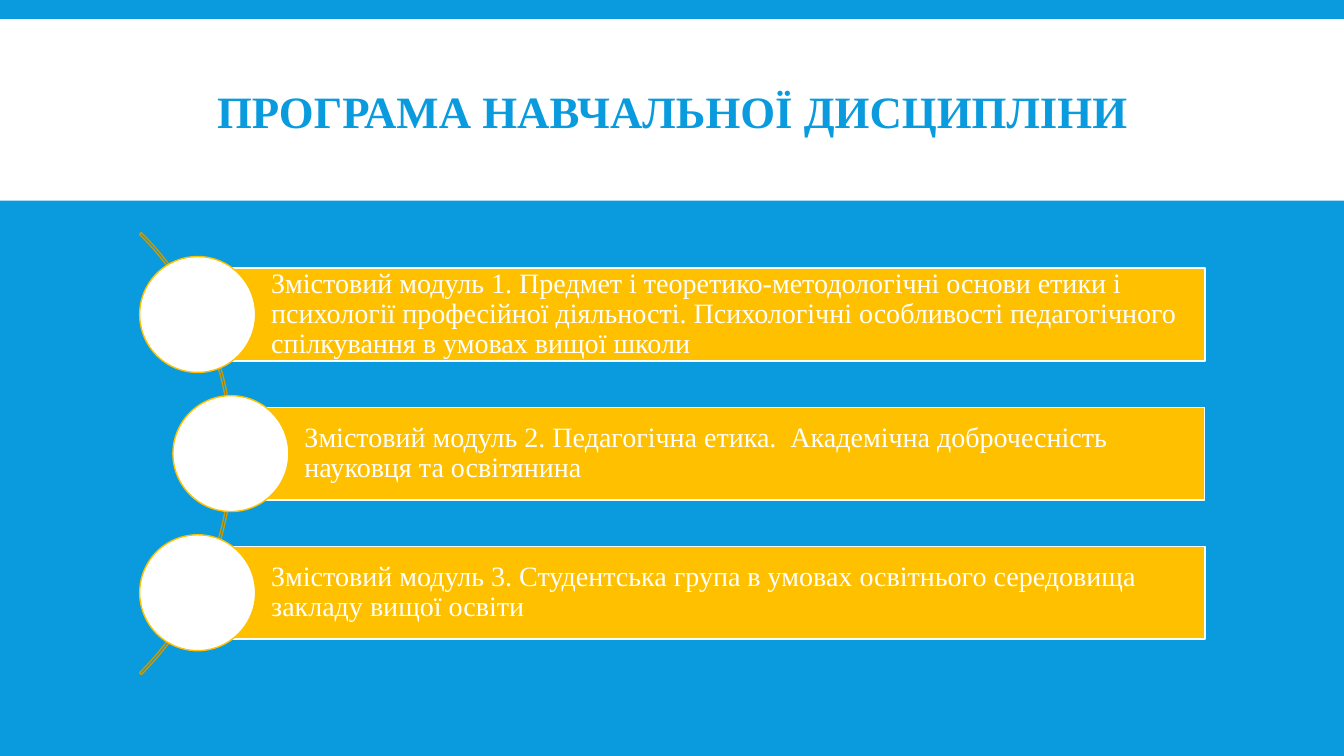
import pptx
import pptx.util
import pptx.dml.color
import pptx.enum.shapes
import pptx.enum.text

Inches, Pt = pptx.util.Inches, pptx.util.Pt
Color = pptx.dml.color.RGBColor.from_string
Kind = pptx.enum.shapes.MSO_SHAPE
Align = pptx.enum.text.PP_ALIGN
Anchor = pptx.enum.text.MSO_ANCHOR


class Theme:
    blue = Color("099BDD")
    white = Color("FFFFFF")
    gold = Color("FFC000")
    dark = Color("CC9A00")
    font = "Times New Roman"
    head = Pt(32)
    body = Pt(20)


def draw(kind, box, fill=None, line=None):
    shape = slide.shapes.add_shape(kind, *map(Inches, box))
    shape.shadow.inherit = False
    if fill is None:
        shape.fill.background()
    else:
        shape.fill.solid()
        shape.fill.fore_color.rgb = fill
    if line is None:
        shape.line.fill.background()
    else:
        shape.line.color.rgb = line
        shape.line.width = Pt(1)
    return shape


def write(shape, text, size, color, bold, align, space):
    frame = shape.text_frame
    frame.text = text
    frame.word_wrap = True
    frame.auto_size = pptx.enum.text.MSO_AUTO_SIZE.NONE
    frame.vertical_anchor = Anchor.MIDDLE
    par = frame.paragraphs[0]
    par.alignment = align
    par.line_spacing = space
    font = par.runs[0].font
    for key, value in {"name": Theme.font, "size": size, "bold": bold}.items():
        setattr(font, key, value)
    font.color.rgb = color


deck = pptx.Presentation()
deck.slide_width, deck.slide_height = Inches(13.33), Inches(7.5)
slide = deck.slides.add_slide(deck.slide_layouts[5])
slide.background.fill.solid()
slide.background.fill.fore_color.rgb = Theme.blue

# Title on its white band, with the band sent to the back
band = draw(Kind.RECTANGLE, (0, 0.19, 13.33, 1.8), Theme.white)
slide.shapes._spTree.insert(2, band._element)
title = slide.shapes.title
place = {"left": 1.32, "top": 0.31, "width": 10.7, "height": 1.65}
for key, value in place.items():
    setattr(title, key, Inches(value))
write(title, "ПРОГРАМА НАВЧАЛЬНОЇ ДИСЦИПЛІНИ",
      Theme.head, Theme.blue, True, Align.CENTER, 0.85)

# Arc behind the modules
arc = draw(Kind.BLOCK_ARC, (-3.89, 1.4, 6.2, 6.2), line=Theme.dark)
for i, value in enumerate((189, 27, 0.004)):
    arc.adjustments[i] = value

# Each module: a bar that starts at the centre of its circle
modules = [
    (1.96, "Змістовий модуль 1. Предмет і теоретико-методологічні основи "
           "етики і психології професійної діяльності. Психологічні "
           "особливості педагогічного спілкування в умовах вищої школи"),
    (2.29, "Змістовий модуль 2. Педагогічна етика.  Академічна "
           "доброчесність науковця та освітянина"),
    (1.96, "Змістовий модуль 3. Студентська група в умовах освітнього "
           "середовища закладу вищої освіти"),
]
right, first, step = 11.95, 3.12, 1.38
high, size = 0.92, 1.15
inset = {"margin_left": 0.73, "margin_top": 0.06,
         "margin_right": 0.06, "margin_bottom": 0.06}
for i, (x, text) in enumerate(modules):
    y = first + i * step
    bar = draw(Kind.RECTANGLE, (x, y - high / 2, right - x, high),
               Theme.gold, Theme.white)
    for key, value in inset.items():
        setattr(bar.text_frame, key, Inches(value))
    write(bar, text, Theme.body, Theme.white, False, Align.LEFT, 0.9)
    draw(Kind.OVAL, (x - size / 2, y - size / 2, size, size),
         Theme.white, Theme.gold)

deck.save("out.pptx")
